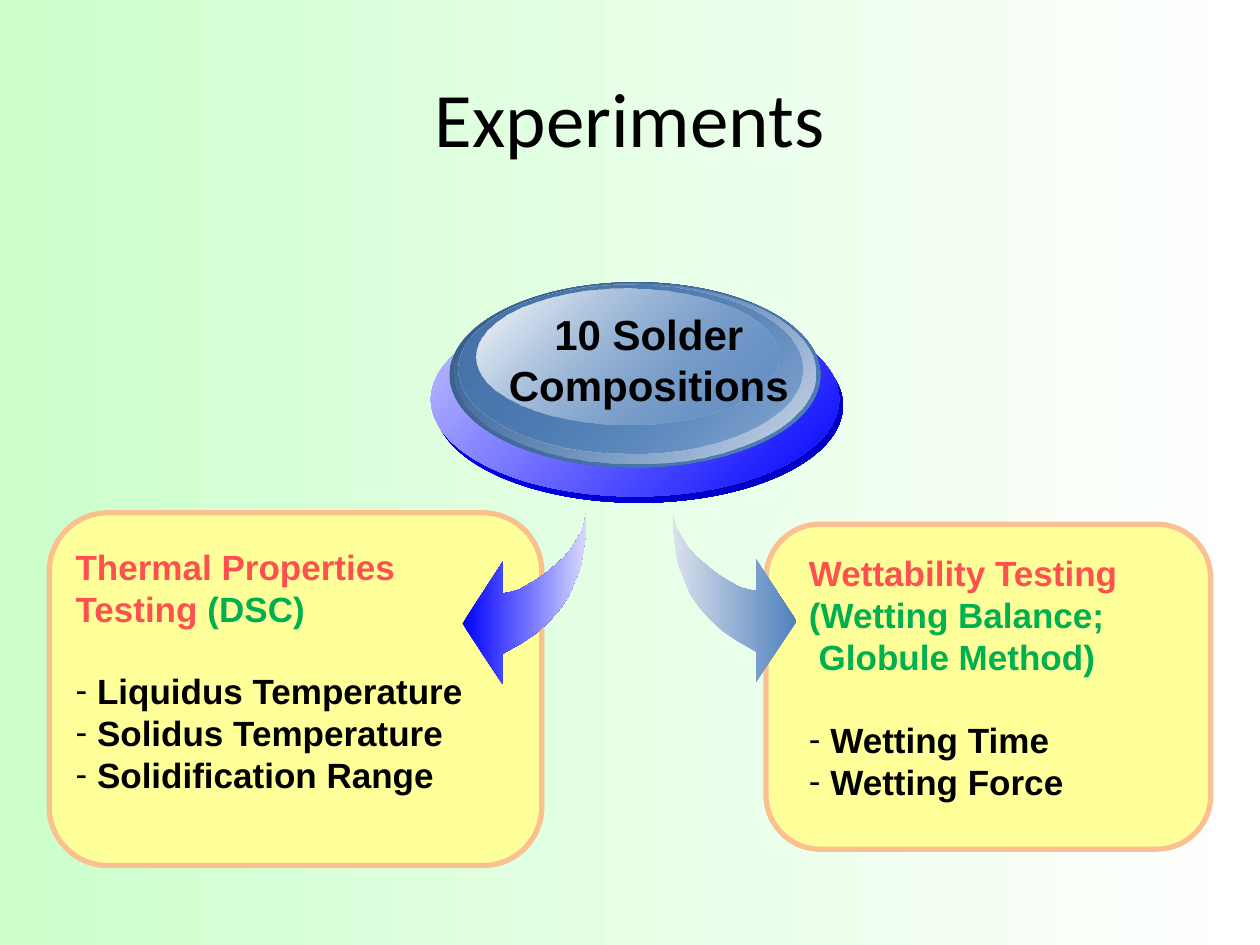
from lxml import etree
from pptx import Presentation
from pptx import util as u
from pptx.dml.color import RGBColor
from pptx.enum import shapes, text
from pptx.oxml.ns import qn

PX = 9144  # EMU in one px, 100 px to the inch
HEX = {
    "black": "000000", "white": "FFFFFF", "mint": "CCFFCC",
    "cream": "FFFF99", "peach": "FAC090", "red": "FF5050", "green": "00B050",
    "blue": "0000FF", "navy": "0000BA", "lilac": "C6C6FF", "haze": "D8D8FF",
    "steel": "4F81BD", "slate": "395C87", "denim": "4775AB",
    "mist": "D7DEEB", "frost": "DBE1ED",
}


def px(n):
    return u.Emu(round(n * PX))


def rgb(name):
    return RGBColor.from_string(HEX[name])


class Deck:
    """Holds the style and the current slide."""
    font, bold = "Arial", True

    def __init__(self, wide, high):
        self.prs = Presentation()
        self.prs.slide_width, self.prs.slide_height = px(wide), px(high)

    def page(self, layout):
        self.slide = self.prs.slides.add_slide(self.prs.slide_layouts[layout])
        self.tree = self.slide.shapes

    def blend(self, fill, owner, stops, angle):
        """Gradient fill; a stop is (colour, opacity in percent)."""
        fill.gradient()
        grad = next(owner.iter(qn("a:gradFill")))
        for child in list(grad):
            grad.remove(child)
        row = etree.SubElement(grad, qn("a:gsLst"))
        for pos, (name, alpha) in zip((0, 100000), stops):
            stop = etree.SubElement(row, qn("a:gs"), pos=str(pos))
            clr = etree.SubElement(stop, qn("a:srgbClr"), val=HEX[name])
            if alpha < 100:
                etree.SubElement(clr, qn("a:alpha"), val=str(alpha * 1000))
        etree.SubElement(grad, qn("a:lin"), ang=str(angle * 60000), scaled="0")

    def back(self, first, last):
        self.blend(self.slide.background.fill, self.slide._element,
                   ((first, 100), (last, 100)), 0)

    def place(self, item, box):
        item.left, item.top, item.width, item.height = map(px, box)

    def words(self, para, line, size, color, font=None, bold=None):
        """Add runs to a paragraph; a newline becomes a line break."""
        for i, part in enumerate(line.split("\n")):
            if i:
                para.add_line_break()
            run = para.add_run()
            run.text = part
            run.font.name = font or self.font
            run.font.size = u.Pt(size)
            run.font.bold = self.bold if bold is None else bold
            run.font.color.rgb = rgb(color)

    def title(self, box, line):
        item = self.tree.title
        self.place(item, box)
        para = item.text_frame.paragraphs[0]
        para.alignment = text.PP_ALIGN.CENTER
        self.words(para, line, 44, "black", "Calibri", False)

    def card(self, box):
        item = self.tree.add_shape(
            shapes.MSO_SHAPE.ROUNDED_RECTANGLE, *map(px, box))
        item.shadow.inherit = False
        item.fill.solid()
        item.fill.fore_color.rgb = rgb("cream")
        item.line.color.rgb = rgb("peach")
        item.line.width = u.Pt(3)

    def body(self, slot, box, heads, points):
        """Fill a body placeholder with heading lines and a dashed list."""
        item = self.slide.placeholders[slot]
        self.tree._spTree.append(item._element)  # bring in front of its card
        self.place(item, box)
        item.fill.solid()
        item.fill.fore_color.rgb = rgb("cream")
        frame = item.text_frame
        frame.auto_size = text.MSO_AUTO_SIZE.NONE
        rows = [(runs, None) for runs in heads]
        rows += [([(point, "black")], "-") for point in points]
        for i, (runs, mark) in enumerate(rows):
            para = frame.add_paragraph() if i else frame.paragraphs[0]
            para.space_before = u.Pt(23 if i == len(heads) else 0)
            props = para._p.get_or_add_pPr()
            dent = px(17) if mark else 0
            props.set("marL", str(dent))
            props.set("indent", str(-dent))
            if mark:
                etree.SubElement(props, qn("a:buChar"), char=mark)
            else:
                etree.SubElement(props, qn("a:buNone"))
            for line, color in runs:
                self.words(para, line, 20, color)

    def oval(self, box, *stops):
        item = self.tree.add_shape(shapes.MSO_SHAPE.OVAL, *map(px, box))
        item.shadow.inherit = False
        item.line.fill.background()
        self.blend(item.fill, item._element, stops, 45)

    def arrow(self, dots, *stops):
        pen = self.tree.build_freeform(*dots[0], scale=PX)
        pen.add_line_segments(dots[1:], close=True)
        item = pen.convert_to_shape()
        item.shadow.inherit = False
        item.line.fill.background()
        self.blend(item.fill, item._element, stops, 0)

    def label(self, box, lines):
        frame = self.tree.add_textbox(*map(px, box)).text_frame
        frame.word_wrap = False
        for i, line in enumerate(lines):
            para = frame.add_paragraph() if i else frame.paragraphs[0]
            para.alignment = text.PP_ALIGN.CENTER
            self.words(para, line, 24, "black")


# Curved arrow pointing left; its mirror image points right
CURVE = [(465, 407), (465, 423), (463, 437), (461, 450), (456, 462),
         (451, 474), (444, 484), (435, 494), (425, 503), (413, 511),
         (399, 519), (399, 543), (367, 495), (399, 446), (399, 471),
         (405, 470), (412, 468), (419, 464), (426, 460), (433, 455),
         (440, 449), (447, 443), (453, 436), (458, 428), (462, 421),
         (464, 414)]
MIRROR = [(999 - x, y - 2) for x, y in CURVE]


def main():
    deck = Deck(1000, 750)
    deck.page(3)
    deck.back("mint", "white")
    deck.title((50, 30, 900, 125), "Experiments")

    # Left card: thermal testing
    deck.card((39, 407, 391, 280))
    deck.body(1, (50, 428, 358, 237),
              [[("Thermal Properties Testing ", "red"), ("(DSC)", "green")]],
              ["Liquidus Temperature", "Solidus Temperature",
               "Solidification Range"])
    deck.arrow(CURVE, ("blue", 100), ("haze", 100))

    # Central button, from the base up to the highlight
    deck.oval((345, 245, 324, 154), ("blue", 100), ("navy", 100))
    deck.oval((342, 240, 324, 154), ("lilac", 100), ("blue", 100))
    deck.oval((357, 224, 294, 147), ("slate", 100), ("steel", 100))
    deck.oval((361, 225, 286, 143), ("steel", 0), ("mist", 100))
    deck.oval((364, 226, 273, 134), ("denim", 100), ("steel", 48))
    deck.oval((378, 229, 240, 108), ("white", 100), ("steel", 38))
    deck.label((393, 240, 244, 91), ["10 Solder", "Compositions"])

    # Right card: wettability testing
    deck.card((608, 416, 353, 258))
    deck.body(2, (632, 433, 314, 219),
              [[("Wettability Testing", "red")],
               [("(Wetting Balance; \n Globule Method)", "green")]],
              ["Wetting Time", "Wetting Force"])
    deck.arrow(MIRROR, ("frost", 100), ("steel", 100))

    deck.prs.save("out.pptx")


if __name__ == "__main__":
    main()
